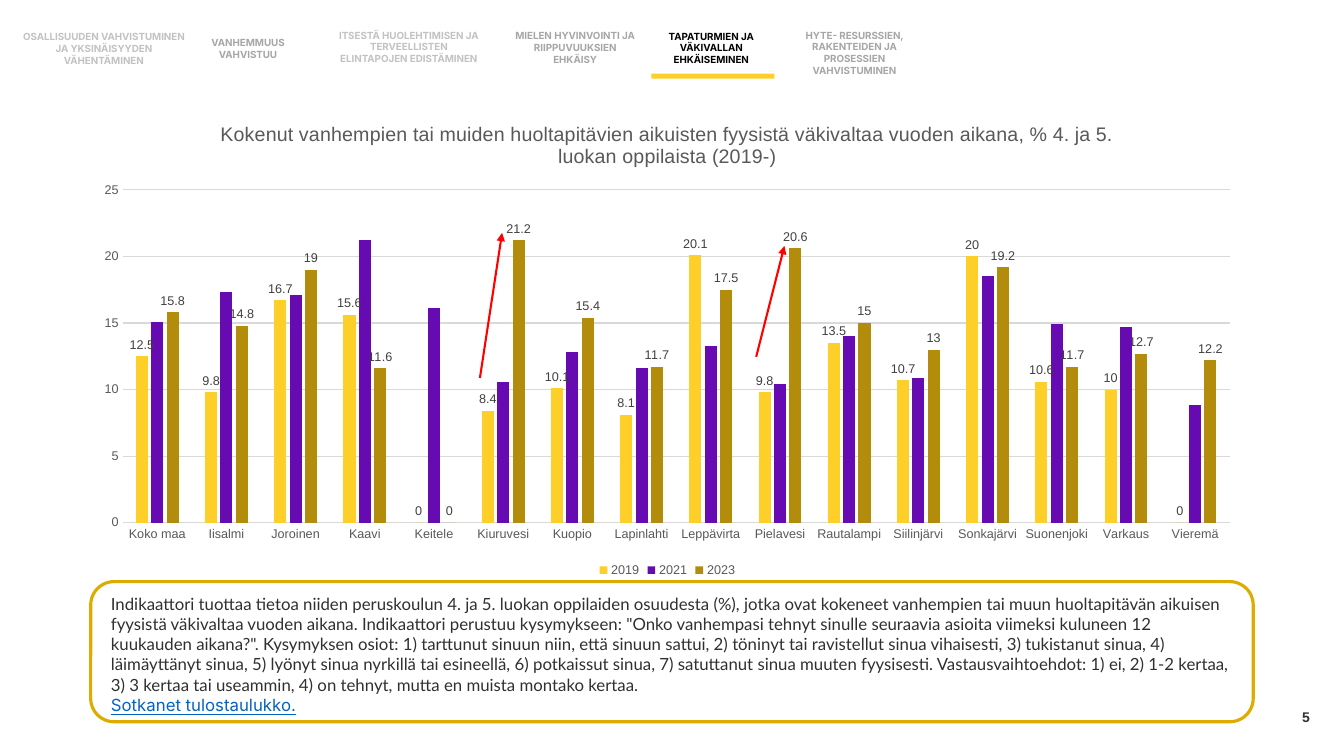
"""Build the slide on violence experienced by pupils, by municipality."""
from lxml import etree
from pptx import Presentation
from pptx.chart.data import CategoryChartData
from pptx.dml.color import RGBColor
from pptx.enum import chart as ch, shapes, text
from pptx.oxml import parse_xml
from pptx.oxml.ns import nsdecls, qn
from pptx.util import Inches, Pt

THEME = {
    "yellow": "FFCF29", "purple": "660AB2", "olive": "B28C0A", "frame": "DEAC00",
    "arrow": "FF0000", "grid": "D9D9D9", "axis": "595959", "label": "404040",
    "body": "303030", "link": "0563C1", "number": "313131",
    "faint": "C2C2C2", "muted": "A6A6A6", "active": "000000",
    "tab_size": 7, "chart_size": 9, "number_size": 10, "body_size": 12, "title_size": 14,
}


def style(font, color, size, name="Arial", **flags):
    font.color.rgb = RGBColor.from_string(THEME[color])
    for key, value in {"size": Pt(THEME[size]), "name": name, **flags}.items():
        setattr(font, key, value)


def add_text(box, lines, align, anchor):
    frame = slide.shapes.add_textbox(*map(Inches, box)).text_frame
    layout = {"word_wrap": True, "vertical_anchor": anchor, "margin_left": 0,
              "margin_right": 0, "margin_top": 0, "margin_bottom": 0}
    for key, value in layout.items():
        setattr(frame, key, value)
    for index, (line, look) in enumerate(lines):
        paragraph = frame.paragraphs[0] if index == 0 else frame.add_paragraph()
        paragraph.alignment = align
        run = paragraph.add_run()
        run.text = line
        style(run.font, **look)


prs = Presentation()
prs.slide_width, prs.slide_height = Inches(13.33), Inches(7.5)
slide = prs.slides.add_slide(prs.slide_layouts[6])
align, anchor = text.PP_ALIGN, text.MSO_ANCHOR

number_look = {"color": "number", "size": "number_size", "bold": True}
add_text((9.99, 6.91, 3, 0.4), [("5", number_look)], align.RIGHT, anchor.MIDDLE)

info_frame = slide.shapes.add_shape(
    shapes.MSO_SHAPE.ROUNDED_RECTANGLE, *map(Inches, (0.9, 5.77, 11.53, 1.39)))
info_frame.shadow.inherit = False
info_frame.fill.background()
info_frame.line.color.rgb = RGBColor.from_string(THEME["frame"])
info_frame.line.width = Pt(2.25)

description = (
    "Indikaattori tuottaa tietoa niiden peruskoulun 4. ja 5. luokan oppilaiden osuudesta (%), "
    "jotka ovat kokeneet vanhempien tai muun huoltapitävän aikuisen fyysistä väkivaltaa vuoden "
    "aikana. Indikaattori perustuu kysymykseen: \"Onko vanhempasi tehnyt sinulle seuraavia "
    "asioita viimeksi kuluneen 12 kuukauden aikana?\". Kysymyksen osiot: 1) tarttunut sinuun "
    "niin, että sinuun sattui, 2) töninyt tai ravistellut sinua vihaisesti, 3) tukistanut sinua, "
    "4) läimäyttänyt sinua, 5) lyönyt sinua nyrkillä tai esineellä, 6) potkaissut sinua, "
    "7) satuttanut sinua muuten fyysisesti. Vastausvaihtoehdot: 1) ei, 2) 1-2 kertaa, "
    "3) 3 kertaa tai useammin, 4) on tehnyt, mutta en muista montako kertaa.")
add_text((1.1, 5.89, 11.12, 1.21), [
    (description, {"color": "body", "size": "body_size", "name": "Lato"}),
    ("Sotkanet tulostaulukko.",
     {"color": "link", "size": "body_size", "name": "Inter", "underline": True}),
], align.LEFT, anchor.TOP)

violence = CategoryChartData()
violence.categories = [
    "Koko maa", "Iisalmi", "Joroinen", "Kaavi", "Keitele", "Kiuruvesi", "Kuopio", "Lapinlahti",
    "Leppävirta", "Pielavesi", "Rautalampi", "Siilinjärvi", "Sonkajärvi", "Suonenjoki",
    "Varkaus", "Vieremä"]
years = [
    ("2019", "yellow", True,
     [12.5, 9.8, 16.7, 15.6, 0, 8.4, 10.1, 8.1, 20.1, 9.8, 13.5, 10.7, 20, 10.6, 10, 0]),
    ("2021", "purple", False,
     [15.1, 17.3, 17.1, 21.2, 16.1, 10.6, 12.8, 11.6, 13.3, 10.4, 14, 10.9, 18.5, 14.9, 14.7, 8.8]),
    ("2023", "olive", True,
     [15.8, 14.8, 19, 11.6, 0, 21.2, 15.4, 11.7, 17.5, 20.6, 15, 13, 19.2, 11.7, 12.7, 12.2]),
]
for year, _, _, values in years:
    violence.add_series(year, values)
chart = slide.shapes.add_chart(
    ch.XL_CHART_TYPE.COLUMN_CLUSTERED, *map(Inches, (0.81, 1.02, 11.62, 4.75)), violence).chart
style(chart.font, "active", "number_size")

title = chart.chart_title.text_frame
title.text = ("Kokenut vanhempien tai muiden huoltapitävien aikuisten fyysistä väkivaltaa "
              "vuoden aikana, % 4. ja 5. luokan oppilaista (2019-)")
style(title.paragraphs[0].runs[0].font, "axis", "title_size", bold=False)
chart.chart_title.include_in_layout = False

chart.has_legend = True
chart.legend.position = ch.XL_LEGEND_POSITION.BOTTOM
chart.legend.include_in_layout = False
style(chart.legend.font, "axis", "chart_size")

municipalities, percent = chart.category_axis, chart.value_axis
for axis in (municipalities, percent):
    axis.major_tick_mark = axis.minor_tick_mark = ch.XL_TICK_MARK.NONE
    style(axis.tick_labels.font, "axis", "chart_size")
for rule in (municipalities.format.line, percent.major_gridlines.format.line):
    rule.color.rgb = RGBColor.from_string(THEME["grid"])
    rule.width = Pt(0.75)
percent.format.line.fill.background()
percent.minimum_scale, percent.maximum_scale, percent.major_unit = 0, 25, 5

columns = chart.plots[0]
columns.vary_by_categories = False
columns.gap_width, columns.overlap = 219, -27
for series, (_, color, labelled, _) in zip(columns.series, years):
    series.format.fill.solid()
    series.format.fill.fore_color.rgb = RGBColor.from_string(THEME[color])
    if labelled:
        labels = series.data_labels
        labels.show_value = True
        labels.position = ch.XL_LABEL_POSITION.OUTSIDE_END
        style(labels.font, "label", "chart_size")

plot_area = chart._chartSpace.chart.plotArea
for layout in plot_area.findall(qn("c:layout")):
    plot_area.remove(layout)
plot_area.insert(0, parse_xml(
    f'<c:layout {nsdecls("c")}><c:manualLayout><c:layoutTarget val="inner"/>'
    '<c:xMode val="edge"/><c:yMode val="edge"/><c:x val="0.035"/><c:y val="0.182"/>'
    '<c:w val="0.945"/><c:h val="0.695"/></c:manualLayout></c:layout>'))

for ends in [(4.76, 3.75, 4.98, 2.31), (7.5, 3.54, 7.78, 2.44)]:
    rise = slide.shapes.add_connector(shapes.MSO_CONNECTOR.STRAIGHT, *map(Inches, ends))
    rise.line.color.rgb = RGBColor.from_string(THEME["arrow"])
    rise.line.width = Pt(1.5)
    etree.SubElement(rise.line._get_or_add_ln(), qn("a:tailEnd"), type="triangle")
    etree.SubElement(rise._element.spPr, qn("a:effectLst"))

tabs = [
    ((0.22, 0.36, 1.62, 0.24), "faint", ["OSALLISUUDEN VAHVISTUMINEN JA YKSINÄISYYDEN VÄHENTÄMINEN"]),
    ((1.85, 0.42, 1.22, 0.12), "muted", ["VANHEMMUUS VAHVISTUU"]),
    ((3.35, 0.29, 1.41, 0.35), "faint",
     ["ITSESTÄ HUOLEHTIMISEN JA TERVEELLISTEN ELINTAPOJEN EDISTÄMINEN"]),
    ((5.07, 0.35, 1.27, 0.24), "muted", ["MIELEN HYVINVOINTI JA RIIPPUVUUKSIEN EHKÄISY"]),
    ((6.42, 0.3, 1.27, 0.35), "active", ["TAPATURMIEN JA VÄKIVALLAN EHKÄISEMINEN"]),
    ((7.77, 0.35, 1.41, 0.35), "muted",
     ["HYTE- RESURSSIEN, RAKENTEIDEN JA PROSESSIEN", "VAHVISTUMINEN"]),
]
for box, color, lines in tabs:
    look = {"color": color, "size": "tab_size", "name": "Inter", "bold": True}
    add_text(box, [(line, look) for line in lines], align.CENTER, anchor.MIDDLE)

active_mark = slide.shapes.add_shape(
    shapes.MSO_SHAPE.RECTANGLE, *map(Inches, (6.46, 0.73, 1.22, 0.05)))
active_mark.shadow.inherit = False
active_mark.fill.solid()
active_mark.fill.fore_color.rgb = RGBColor.from_string(THEME["yellow"])
active_mark.line.fill.background()

prs.save("out.pptx")
